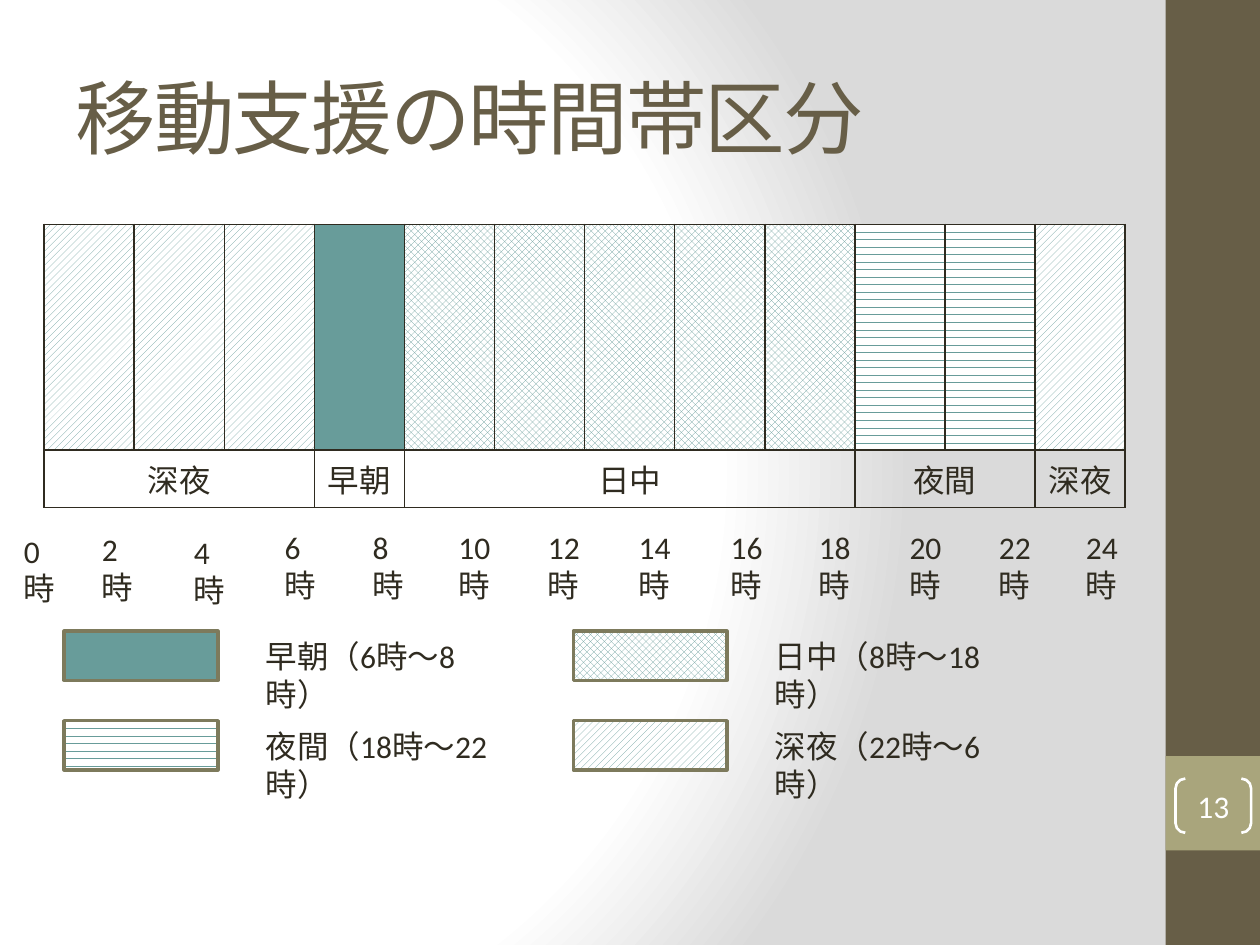
from lxml import etree
from pptx import Presentation
from pptx.dml.color import RGBColor
from pptx.enum.dml import MSO_PATTERN as Pattern
from pptx.enum.shapes import MSO_SHAPE as Shape
from pptx.enum.text import MSO_ANCHOR as Anchor, PP_ALIGN as Align
from pptx.oxml import parse_xml
from pptx.util import Inches, Pt

COLORS = {
    "ink": "2F2B20", "brown": "675E47", "olive": "A9A57C", "frame": "7D7A5C",
    "teal": "689C9A", "white": "FFFFFF", "gray": "DADADA",
}
DRAWING = "http://schemas.openxmlformats.org/drawingml/2006/main"
PRESENTATION = "http://schemas.openxmlformats.org/presentationml/2006/main"

TITLE = "移動支援の時間帯区分"
PAGE = "13"
PATTERNS = {
    "深夜": Pattern.WIDE_UPWARD_DIAGONAL,
    "早朝": None,
    "日中": Pattern.LARGE_CHECKER_BOARD,
    "夜間": Pattern.DASHED_HORIZONTAL,
}
PERIODS = [("深夜", 3), ("早朝", 1), ("日中", 5), ("夜間", 2), ("深夜", 1)]
HOUR_LEFTS = [0.09, 0.71, 1.44, 2.16, 2.86, 3.54, 4.25,
              4.97, 5.7, 6.4, 7.12, 7.83, 8.52]
HOUR_TOPS = {0: 4.17, 2: 4.16, 4: 4.18}
LEGEND = [
    ("早朝", "（6時～8時）", 0, 0, 2.2),
    ("夜間", "（18時～22時）", 0, 1, 2.45),
    ("日中", "（8時～18時）", 1, 0, 2.3),
    ("深夜", "（22時～6時）", 1, 1, 2.3),
]
LEGEND_COLUMNS = [(0.51, 2.01), (4.55, 6.05)]
LEGEND_TOP, LEGEND_STEP = 5.01, 0.71


def rgb(name):
    return RGBColor.from_string(COLORS[name])


def box(left, top, width, height):
    return [Inches(v) for v in (left, top, width, height)]


def write(frame, text, size=18, color="ink", font="Calibri",
          align=Align.LEFT, anchor=Anchor.TOP, spacing=None):
    frame.word_wrap = True
    frame.vertical_anchor = anchor
    paragraph = frame.paragraphs[0]
    paragraph.alignment = align
    run = paragraph.add_run()
    run.text = text
    run.font.size = Pt(size)
    run.font.name = font
    run.font.color.rgb = rgb(color)
    if spacing is not None:
        run.font._element.set("spc", str(spacing * 100))


def fill_period(fill, period):
    pattern = PATTERNS[period]
    if pattern is None:
        fill.solid()
        fill.fore_color.rgb = rgb("teal")
    else:
        fill.patterned()
        fill.pattern = pattern
        fill.fore_color.rgb = rgb("teal")
        fill.back_color.rgb = rgb("white")


def add_block(slide, place, kind=Shape.RECTANGLE, fill=None, line=None, weight=1):
    block = slide.shapes.add_shape(kind, *box(*place))
    block.shadow.inherit = False
    if fill:
        block.fill.solid()
        block.fill.fore_color.rgb = rgb(fill)
    else:
        block.fill.background()
    if line:
        block.line.color.rgb = rgb(line)
        block.line.width = Pt(weight)
    else:
        block.line.fill.background()
    return block


def set_background(slide):
    stops = "".join(
        f'<a:gs pos="{pos * 1000}"><a:srgbClr val="{COLORS[name]}"/></a:gs>'
        for pos, name in [(0, "white"), (75, "white"), (100, "gray")])
    slide._element.cSld.insert(0, parse_xml(
        f'<p:bg xmlns:p="{PRESENTATION}" xmlns:a="{DRAWING}"><p:bgPr>'
        f'<a:gradFill rotWithShape="1"><a:gsLst>{stops}</a:gsLst>'
        '<a:path path="circle">'
        '<a:fillToRect l="20000" t="50000" r="100000" b="50000"/></a:path>'
        '</a:gradFill><a:effectLst/></p:bgPr></p:bg>'))


def set_borders(cell):
    properties = cell._tc.get_or_add_tcPr()
    for index, side in enumerate(("lnL", "lnR", "lnT", "lnB")):
        border = etree.Element(f"{{{DRAWING}}}{side}", w=str(Pt(1)))
        solid = etree.SubElement(border, f"{{{DRAWING}}}solidFill")
        etree.SubElement(solid, f"{{{DRAWING}}}srgbClr", val=COLORS["ink"])
        properties.insert(index, border)


def add_timeline(slide):
    count = sum(span for _, span in PERIODS)
    table = slide.shapes.add_table(2, count, *box(0.35, 1.78, 8.58, 2.25)).table
    table.first_row = table.horz_banding = False
    for column in table.columns:
        column.width = Inches(8.58 / count)
    for row, height in zip(table.rows, (1.79, 0.46)):
        row.height = Inches(height)
    start = 0
    for period, span in PERIODS:
        for column in range(start, start + span):
            fill_period(table.cell(0, column).fill, period)
            table.cell(1, column).fill.background()
        label = table.cell(1, start)
        if span > 1:
            label.merge(table.cell(1, start + span - 1))
        write(label.text_frame, period, align=Align.CENTER)
        label.vertical_anchor = Anchor.MIDDLE
        start += span
    for cell in table.iter_cells():
        set_borders(cell)


def add_hours(slide):
    group = slide.shapes.add_group_shape()
    for index, left in enumerate(HOUR_LEFTS):
        hour = index * 2
        width = 0.55 if hour < 10 else 0.68
        place = box(left, HOUR_TOPS.get(hour, 4.14), width, 0.4)
        write(group.shapes.add_textbox(*place).text_frame, f"{hour}時")


def add_legend(slide):
    for period, hours, column, row, width in LEGEND:
        swatch_left, text_left = LEGEND_COLUMNS[column]
        top = LEGEND_TOP + row * LEGEND_STEP
        swatch = add_block(slide, (swatch_left, top, 1.22, 0.39),
                           line="frame", weight=2)
        fill_period(swatch.fill, period)
        note = slide.shapes.add_textbox(*box(text_left, top, width, 0.4))
        write(note.text_frame, period + hours)


def add_page_number(slide):
    bracket = add_block(slide, (9.33, 6.18, 0.6, 0.43), Shape.DOUBLE_BRACKET,
                        line="white", weight=1.5)
    bracket.adjustments[0] = 0.18
    frame = bracket.text_frame
    frame.margin_left = frame.margin_right = 0
    frame.margin_top = frame.margin_bottom = 0
    write(frame, PAGE, color="white", align=Align.CENTER, anchor=Anchor.MIDDLE)


def main():
    deck = Presentation()
    deck.slide_width, deck.slide_height = Inches(10), Inches(7.5)
    slide = deck.slides.add_slide(deck.slide_layouts[6])
    set_background(slide)
    add_block(slide, (9.25, 0, 0.75, 7.5), fill="brown")
    add_block(slide, (9.25, 6, 0.75, 0.75), fill="olive")
    title = slide.shapes.add_textbox(*box(0.5, 0.3, 8.33, 1.25))
    write(title.text_frame, TITLE, size=46, color="brown", font="Cambria",
          anchor=Anchor.MIDDLE, spacing=-1)
    add_timeline(slide)
    add_hours(slide)
    add_legend(slide)
    add_page_number(slide)
    deck.save("out.pptx")


if __name__ == "__main__":
    main()
